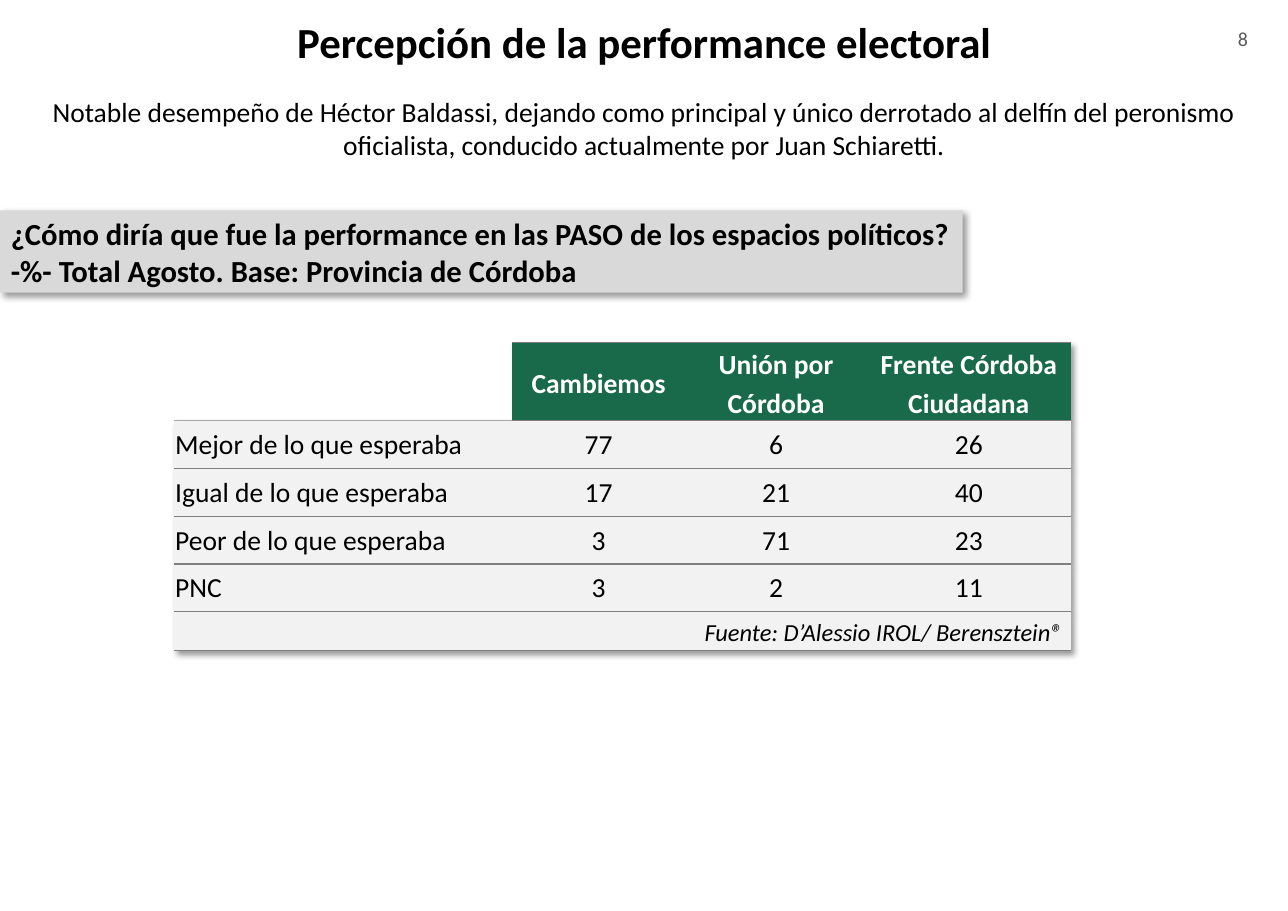
from dataclasses import dataclass

from lxml.etree import fromstring
from pptx import Presentation
from pptx.dml.color import RGBColor
from pptx.enum.shapes import MSO_SHAPE
from pptx.enum.text import MSO_ANCHOR as Anchor, PP_ALIGN as Align
from pptx.oxml.ns import nsdecls, qn
from pptx.util import Cm, Pt

TITLE = "Percepción de la performance electoral"
PAGE_NUMBER = "8"
SUMMARY = ("Notable desempeño de Héctor Baldassi, dejando como principal y único derrotado "
           "al delfín del peronismo oficialista, conducido actualmente por Juan Schiaretti.")
QUESTION = ["¿Cómo diría que fue la performance en las PASO de los espacios políticos?",
            "-%- Total Agosto. Base: Provincia de Córdoba"]
PARTIES = ["Cambiemos", "Unión por Córdoba", "Frente Córdoba Ciudadana"]
RATINGS = [
    ("Mejor de lo que esperaba", 77, 6, 26),
    ("Igual de lo que esperaba", 17, 21, 40),
    ("Peor de lo que esperaba", 3, 71, 23),
    ("PNC", 3, 2, 11),
]
SOURCE = "Fuente: D’Alessio IROL/ Berensztein®"

SLIDE_WIDTH, SLIDE_HEIGHT = 29.7, 21
COLUMN_WIDTHS = [7.8, 3.99, 4.19, 4.7]
ROW_HEIGHTS = [1.8] + [1.1] * len(RATINGS) + [0.9]


@dataclass(frozen=True)
class Theme:
    font: str = "Calibri"
    black: str = "000000"
    white: str = "FFFFFF"
    page_grey: str = "595959"
    banner: str = "D9D9D9"
    header: str = "19694B"
    body: str = "F2F2F2"
    rule: str = "808080"
    label_rule: str = "A6A6A6"
    title_size: int = 28
    question_size: int = 20
    text_size: int = 18
    source_size: int = 16
    page_size: int = 13


THEME = Theme()


def write(frame, lines, size, color=THEME.black, align=Align.CENTER, bold=False,
          italic=False, spacing=None):
    frame.word_wrap = True
    frame.text = "\n".join(lines)
    for paragraph in frame.paragraphs:
        paragraph.alignment = align
        paragraph.line_spacing = spacing
        font = paragraph.font
        font.name, font.size = THEME.font, Pt(size)
        font.bold, font.italic = bold, italic
        font.color.rgb = RGBColor.from_string(color)


def soft_shadow():
    return fromstring(
        f'<a:effectLst {nsdecls("a")}><a:outerShdw blurRad="50800" dist="38100" dir="2700000" '
        'algn="tl" rotWithShape="0"><a:srgbClr val="000000"><a:alpha val="40000"/></a:srgbClr>'
        '</a:outerShdw></a:effectLst>')


def rule_cell(cell, **colors):
    """Draw 1 pt rules on the named edges, lnT before lnB."""
    properties = cell._tc.get_or_add_tcPr()
    for index, (edge, color) in enumerate(colors.items()):
        properties.insert(index, fromstring(
            f'<a:{edge} {nsdecls("a")} w="12700"><a:solidFill><a:srgbClr val="{color}"/>'
            f'</a:solidFill></a:{edge}>'))


def style_cell(cell, fill, side, top=0):
    cell.fill.solid()
    cell.fill.fore_color.rgb = RGBColor.from_string(fill)
    cell.vertical_anchor = Anchor.MIDDLE
    cell.margin_left = cell.margin_right = Cm(side)
    cell.margin_top, cell.margin_bottom = Cm(top), 0


def add_text(slide, box, lines, size, color=THEME.black):
    frame = slide.shapes.add_textbox(*map(Cm, box)).text_frame
    write(frame, lines, size, color)
    return frame


def add_title(slide):
    title = slide.shapes.title
    title.left, title.top, title.width, title.height = map(Cm, (0, -0.25, SLIDE_WIDTH, 2.4))
    title.text_frame.vertical_anchor = Anchor.MIDDLE
    write(title.text_frame, [TITLE], THEME.title_size, bold=True)


def add_question(slide):
    banner = slide.shapes.add_shape(MSO_SHAPE.RECTANGLE, *map(Cm, (0, 4.85, 22.2, 1.9)))
    banner.fill.solid()
    banner.fill.fore_color.rgb = RGBColor.from_string(THEME.banner)
    banner.line.fill.background()
    banner._element.spPr.append(soft_shadow())
    banner.text_frame.vertical_anchor = Anchor.MIDDLE
    write(banner.text_frame, QUESTION, THEME.question_size, align=Align.LEFT, bold=True)


def add_ratings(slide):
    table = slide.shapes.add_table(
        len(ROW_HEIGHTS), len(COLUMN_WIDTHS), Cm(4.01), Cm(7.9),
        Cm(sum(COLUMN_WIDTHS)), Cm(sum(ROW_HEIGHTS))).table
    properties = table._tbl.tblPr
    no_grid = "{2D5ABB26-0587-4C30-8999-92F81FD0307C}"
    properties.find(qn("a:tableStyleId")).text = no_grid
    properties.insert(0, soft_shadow())
    for column, width in zip(table.columns, COLUMN_WIDTHS):
        column.width = Cm(width)
    for row, height in zip(table.rows, ROW_HEIGHTS):
        row.height = Cm(height)

    rule_cell(table.cell(0, 0), lnB=THEME.label_rule)
    for column, party in enumerate(PARTIES, 1):
        cell = table.cell(0, column)
        style_cell(cell, THEME.header, side=0.18)
        rule_cell(cell, lnT=THEME.rule, lnB=THEME.rule)
        write(cell.text_frame, [party], THEME.text_size, THEME.white, bold=True, spacing=1.15)

    for row, rating in enumerate(RATINGS, 1):
        for column, value in enumerate(rating):
            cell = table.cell(row, column)
            below_blank = row == 1 and column == 0
            style_cell(cell, THEME.body, side=0.03, top=0.03)
            rule_cell(cell, lnT=THEME.label_rule if below_blank else THEME.rule, lnB=THEME.rule)
            write(cell.text_frame, [str(value)], THEME.text_size,
                  align=Align.CENTER if column else Align.LEFT)

    last = len(ROW_HEIGHTS) - 1
    source = table.cell(last, 0)
    source.merge(table.cell(last, len(COLUMN_WIDTHS) - 1))
    style_cell(source, THEME.body, side=0.18)
    rule_cell(source, lnT=THEME.rule, lnB=THEME.rule)
    write(source.text_frame, [SOURCE], THEME.source_size, align=Align.RIGHT,
          italic=True, spacing=1.15)


def main():
    presentation = Presentation()
    presentation.slide_width, presentation.slide_height = Cm(SLIDE_WIDTH), Cm(SLIDE_HEIGHT)
    title_only = presentation.slide_layouts[5]
    slide = presentation.slides.add_slide(title_only)
    add_title(slide)
    add_text(slide, (27.53, 0.5, 2.26, 1.1), [PAGE_NUMBER], THEME.page_size, THEME.page_grey)
    summary = add_text(slide, (0, 2.06, SLIDE_WIDTH, 1.8), [SUMMARY], THEME.text_size)
    summary.vertical_anchor = Anchor.MIDDLE
    add_ratings(slide)
    add_question(slide)
    presentation.save("out.pptx")


if __name__ == "__main__":
    main()
